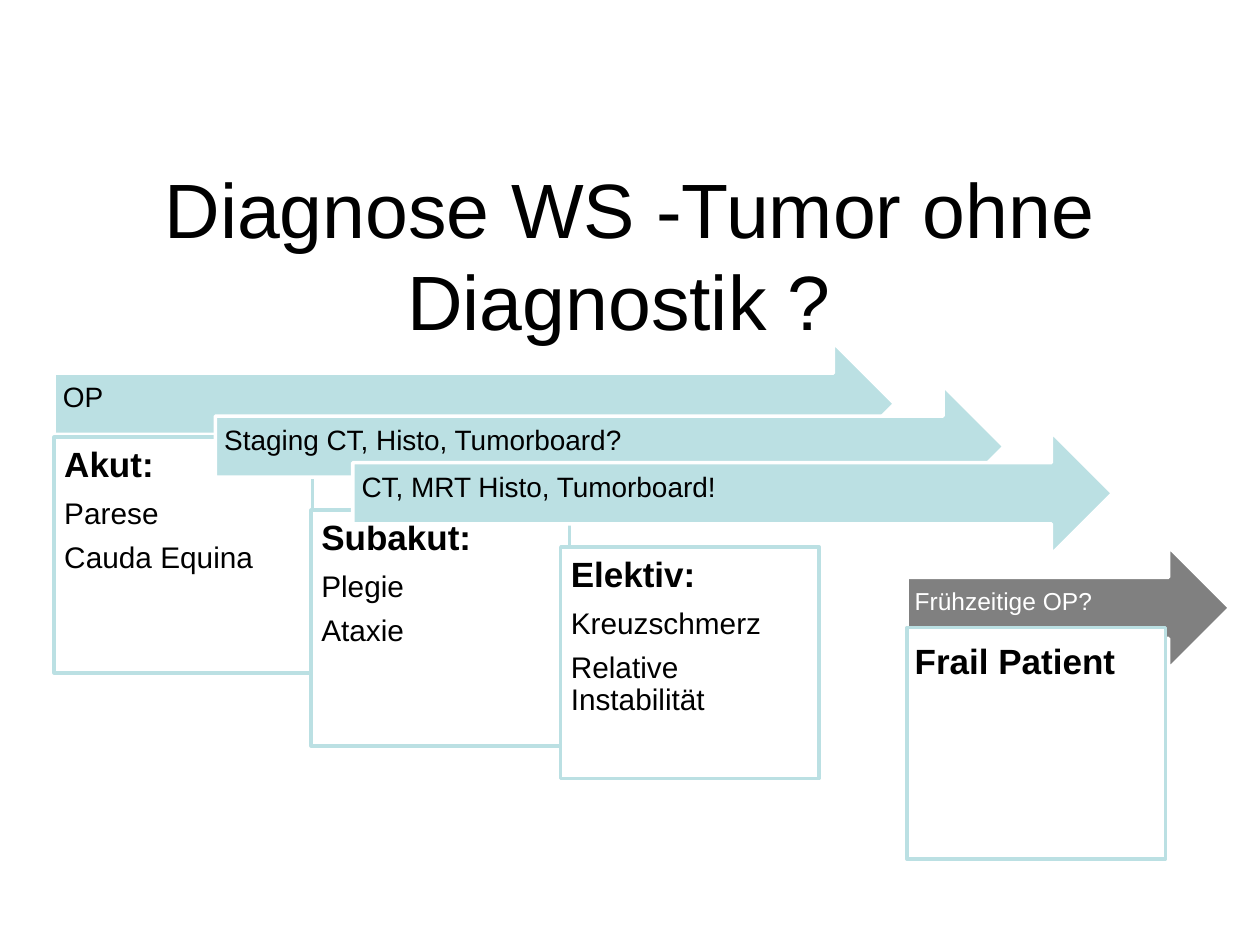
from dataclasses import dataclass

from pptx import Presentation
from pptx.dml.color import RGBColor
from pptx.enum.shapes import MSO_SHAPE
from pptx.enum.text import MSO_ANCHOR, PP_ALIGN
from pptx.util import Inches, Pt

RIGHT_ARROW = MSO_SHAPE.RIGHT_ARROW
RECTANGLE = MSO_SHAPE.RECTANGLE
TOP = MSO_ANCHOR.TOP
MIDDLE = MSO_ANCHOR.MIDDLE
LEFT = PP_ALIGN.LEFT
CENTER = PP_ALIGN.CENTER

COLOURS = {
    "black": "000000",
    "white": "FFFFFF",
    "aqua": "BBE0E3",
    "grey": "808080",
}
FONT_NAME = "Arial"
ARROW_HEIGHT = 0.97
CARD_WIDTH = 2.05
HEADING_SIZE = 20
SYMPTOM_SIZE = 17
SPACING_RATIO = 0.4


@dataclass(frozen=True)
class Arrow:
    label: str
    left: float
    top: float
    width: float
    fill: str = "aqua"
    font_colour: str = "black"
    size: int = 16
    inset: float = 0.07


@dataclass(frozen=True)
class Card:
    heading: str
    symptoms: tuple[str, ...]
    left: float
    top: float
    height: float
    inset_left: float = 0.08
    inset_top: float = 0.08


STEPS = (
    Arrow("OP", 0.43, 2.72, 6.67),
    Card("Akut:", ("Parese", "Cauda Equina"), 0.43, 3.47, 1.87),
    Arrow("Staging CT, Histo, Tumorboard?", 1.71, 3.06, 6.26),
    Card("Subakut:", ("Plegie", "Ataxie"), 2.47, 4.05, 1.87),
    Arrow("CT, MRT Histo, Tumorboard!", 2.8, 3.43, 6.03),
    Card("Elektiv:", ("Kreuzschmerz", "Relative Instabilität"), 4.45, 4.34, 1.84),
    Arrow("Frühzeitige OP?", 7.2, 4.34, 2.56, "grey", "white", 14, 0.06),
    Card("Frail Patient", (), 7.2, 4.98, 1.84, 0.06, 0.13),
)


def colour(name: str) -> RGBColor:
    return RGBColor.from_string(COLOURS[name])


def add_run(paragraph, text: str, size: int, font_colour: str = "black",
            bold: bool = False) -> None:
    run = paragraph.add_run()
    run.text = text
    run.font.name = FONT_NAME
    run.font.size = Pt(size)
    run.font.bold = bold
    run.font.color.rgb = colour(font_colour)


def set_frame(shape, anchor, insets: tuple[float, float, float, float]):
    frame = shape.text_frame
    frame.word_wrap = True
    frame.vertical_anchor = anchor
    (frame.margin_left, frame.margin_top,
     frame.margin_right, frame.margin_bottom) = map(Inches, insets)
    return frame


def add_block(slide, kind, left: float, top: float, width: float,
              height: float, fill: str, line: str):
    shape = slide.shapes.add_shape(
        kind, Inches(left), Inches(top), Inches(width), Inches(height))
    shape.shadow.inherit = False
    shape.fill.solid()
    shape.fill.fore_color.rgb = colour(fill)
    shape.line.color.rgb = colour(line)
    shape.line.width = Pt(2)
    return shape


def add_arrow(slide, arrow: Arrow) -> None:
    shape = add_block(slide, RIGHT_ARROW, arrow.left, arrow.top, arrow.width,
                      ARROW_HEIGHT, arrow.fill, "white")
    frame = set_frame(shape, MIDDLE, (arrow.inset, arrow.inset, 0.28, 0.15))
    paragraph = frame.paragraphs[0]
    paragraph.alignment = LEFT
    paragraph.line_spacing = 0.9
    add_run(paragraph, arrow.label, arrow.size, arrow.font_colour)


def add_card(slide, card: Card) -> None:
    shape = add_block(slide, RECTANGLE, card.left, card.top, CARD_WIDTH,
                      card.height, "white", "aqua")
    frame = set_frame(shape, TOP, (card.inset_left, card.inset_top, 0.08, 0.08))
    for index, text in enumerate((card.heading, *card.symptoms)):
        is_heading = index == 0
        size = HEADING_SIZE if is_heading else SYMPTOM_SIZE
        paragraph = frame.paragraphs[0] if is_heading else frame.add_paragraph()
        paragraph.alignment = LEFT
        paragraph.line_spacing = 0.9
        paragraph.space_after = Pt(size * SPACING_RATIO)
        add_run(paragraph, text, size, bold=is_heading)


def add_title(slide, text: str) -> None:
    box = slide.shapes.add_textbox(Inches(0.5), Inches(1.39), Inches(9), Inches(1.25))
    frame = set_frame(box, MIDDLE, (0.1, 0.05, 0.1, 0.05))
    paragraph = frame.paragraphs[0]
    paragraph.alignment = CENTER
    add_run(paragraph, text, 44)


def main() -> None:
    presentation = Presentation()
    presentation.slide_width = Inches(10)
    presentation.slide_height = Inches(7.5)
    slide = presentation.slides.add_slide(presentation.slide_layouts[6])
    add_title(slide, "Diagnose WS -Tumor ohne Diagnostik ? ")
    for step in STEPS:
        if isinstance(step, Arrow):
            add_arrow(slide, step)
        else:
            add_card(slide, step)
    presentation.save("out.pptx")


if __name__ == "__main__":
    main()
